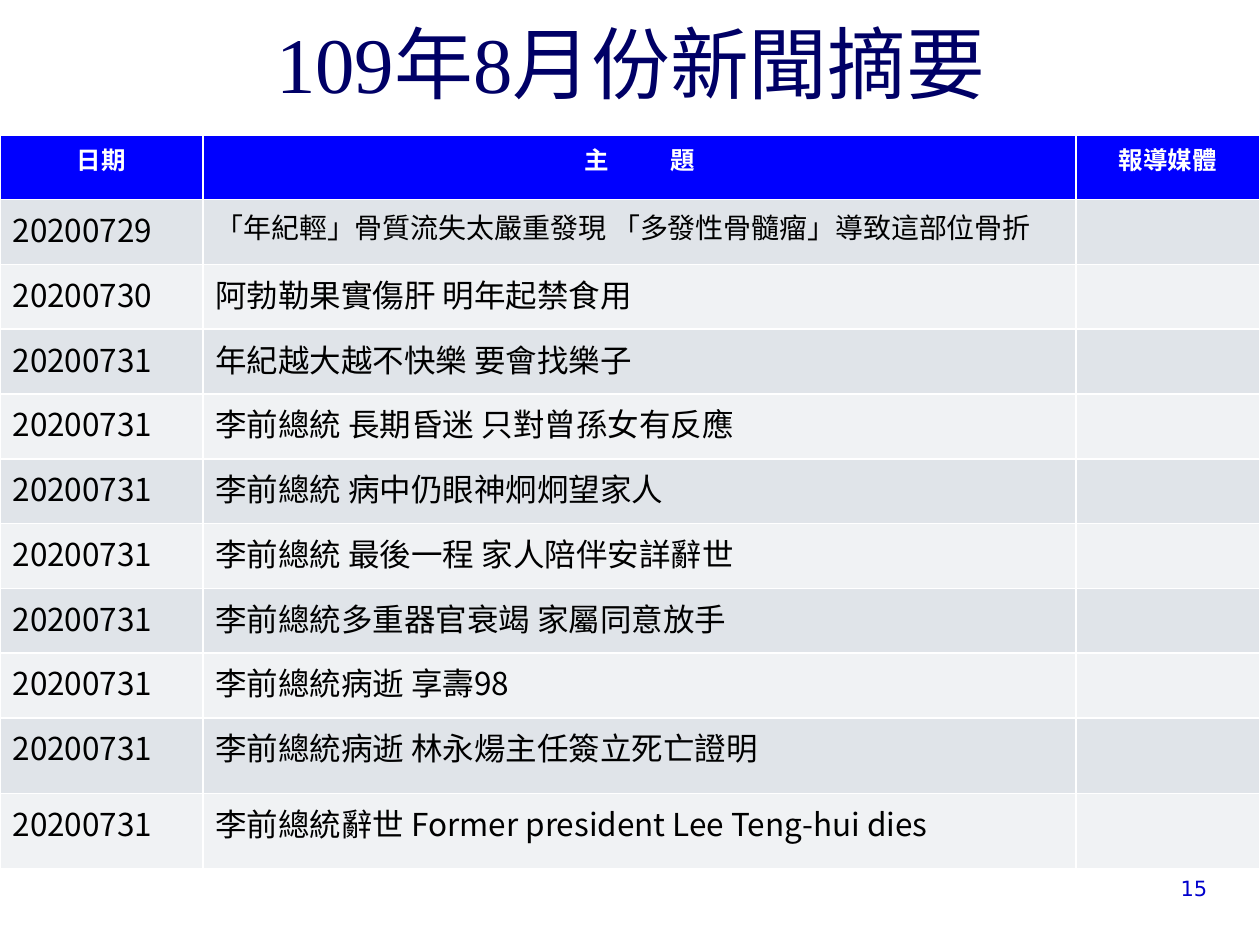
"""Build the monthly news summary slide."""
from lxml import etree
from pptx import Presentation, util as u
from pptx.dml.color import RGBColor
from pptx.enum import text
from pptx.oxml.ns import qn

SANS = "Noto Sans CJK SC"
TITLE = "109年8月份新聞摘要"
HEADS = ["日期", "主 題", "報導媒體"]
NEWS = [
    ("20200729", "「年紀輕」骨質流失太嚴重發現 「多發性骨髓瘤」導致這部位骨折"),
    ("20200730", "阿勃勒果實傷肝 明年起禁食用"),
    ("20200731", "年紀越大越不快樂 要會找樂子"),
    ("20200731", "李前總統 長期昏迷 只對曾孫女有反應"),
    ("20200731", "李前總統 病中仍眼神炯炯望家人"),
    ("20200731", "李前總統 最後一程 家人陪伴安詳辭世"),
    ("20200731", "李前總統多重器官衰竭 家屬同意放手"),
    ("20200731", "李前總統病逝 享壽98"),
    ("20200731", "李前總統病逝 林永煬主任簽立死亡證明"),
    ("20200731", "李前總統辭世 Former president Lee Teng-hui dies"),
]
COLS = [1.61, 6.93, 1.46]
TOP, HIGH, TALL = 1.07, 5.83, 0.6
BANDS = ["E0E4E9", "F0F2F4"]


def shade(code):
    return RGBColor.from_string(code)


def style(para, size, color, name=SANS, align=None, bold=False):
    para.alignment = align
    font = para.font
    font.size, font.bold, font.name = u.Pt(size), bold, name
    font.color.rgb = shade(color)
    east = etree.SubElement(font._element, qn("a:ea"))
    east.set("typeface", SANS)


def place(shape, left, top, width, height):
    shape.left, shape.top = u.Inches(left), u.Inches(top)
    shape.width, shape.height = u.Inches(width), u.Inches(height)


def spread(para, label):
    """Write a label whose words stand wide apart."""
    first, last = label.split(" ")
    run = para.add_run()
    run.text = first + " "
    run.font._element.set("spc", "1600")
    para.add_run().text = last


def fill(cell, label, color, size, ink, align=None, bold=False):
    cell.fill.solid()
    cell.fill.fore_color.rgb = shade(color)
    para = cell.text_frame.paragraphs[0]
    if bold and " " in label:
        spread(para, label)
    else:
        para.text = label
    style(para, size, ink, align=align, bold=bold)


def main():
    deck = Presentation()
    deck.slide_width, deck.slide_height = u.Inches(10), u.Inches(7.5)
    slide = deck.slides.add_slide(deck.slide_layouts[5])

    title = slide.shapes.title
    place(title, 0.63, 0.34, 8.75, 0.58)
    frame = title.text_frame
    frame.text = TITLE
    frame.auto_size = text.MSO_AUTO_SIZE.NONE
    frame.vertical_anchor = text.MSO_ANCHOR.BOTTOM
    style(frame.paragraphs[0], 45, "000066", "Times New Roman", text.PP_ALIGN.CENTER)

    count = len(NEWS) + 1
    table = slide.shapes.add_table(
        count, len(COLS), 0, u.Inches(TOP), u.Inches(sum(COLS)), u.Inches(HIGH)).table
    for col, width in zip(table.columns, COLS):
        col.width = u.Inches(width)
    short = (HIGH - 2 * TALL) / (count - 2)
    for i, row in enumerate(table.rows):
        row.height = u.Inches(TALL if i >= count - 2 else short)

    for cell, head in zip(table.rows[0].cells, HEADS):
        fill(cell, head, "0000FF", 14, "FFFFFF", text.PP_ALIGN.CENTER, True)
    for i, (date, topic) in enumerate(NEWS):
        for j, label in enumerate((date, topic, "")):
            size = 16 if (i, j) == (0, 1) else 18
            fill(table.cell(i + 1, j), label, BANDS[i % 2], size, "000000")

    page = slide.shapes.add_textbox(0, 0, 0, 0)
    place(page, 8.94, 6.9, 0.74, 0.3)
    page.text_frame.word_wrap = True
    page.text_frame.text = "15"
    style(page.text_frame.paragraphs[0], 12, "0000CC", "DejaVu Sans", text.PP_ALIGN.RIGHT)

    deck.save("out.pptx")


if __name__ == "__main__":
    main()
